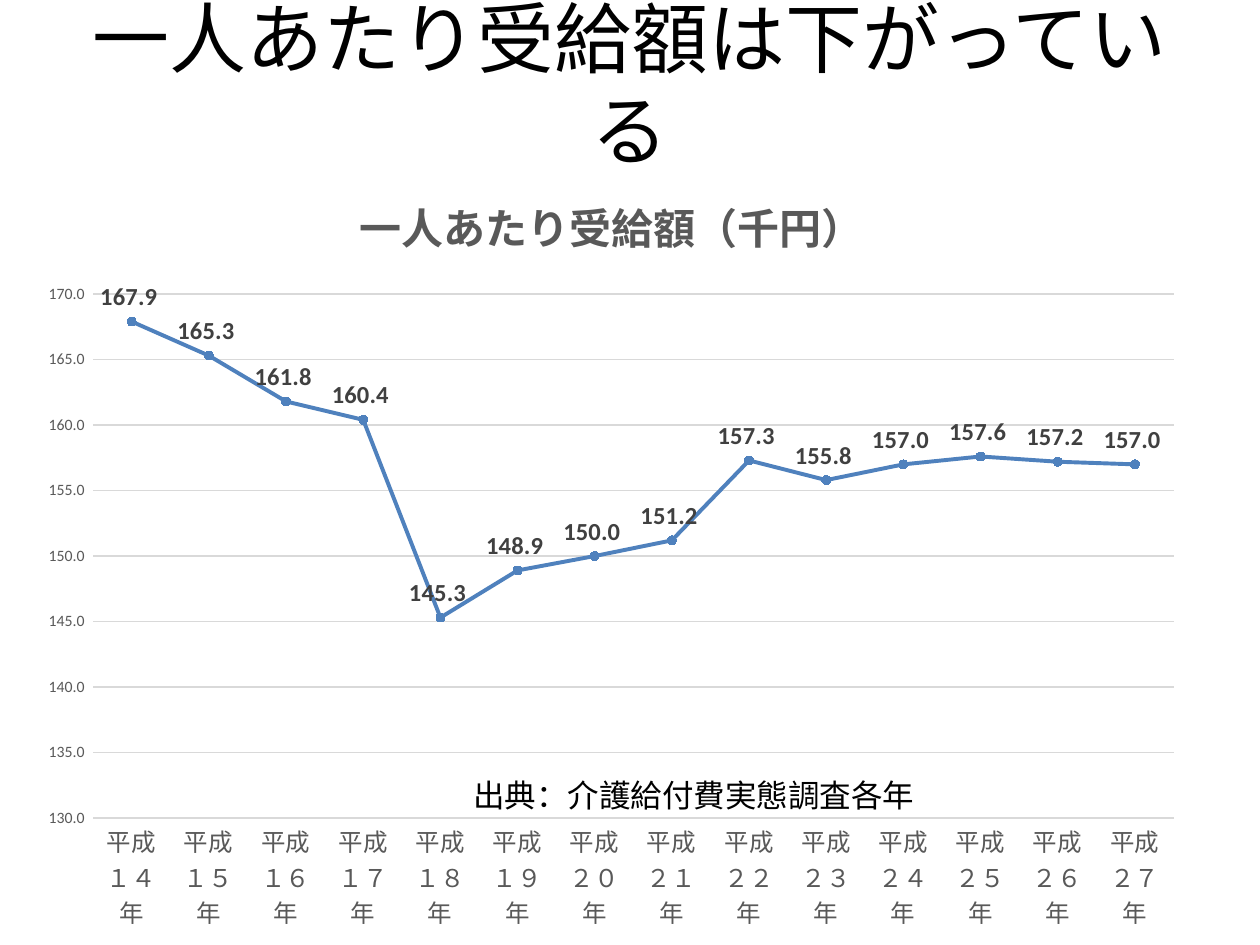
from dataclasses import dataclass

from pptx import Presentation
from pptx.chart.data import CategoryChartData
from pptx.dml.color import RGBColor
from pptx.enum.chart import XL_CHART_TYPE, XL_LABEL_POSITION, XL_MARKER_STYLE, XL_TICK_MARK
from pptx.enum.text import MSO_ANCHOR, PP_ALIGN
from pptx.util import Inches, Pt

FONT = "Calibri"
BLACK = RGBColor(0x00, 0x00, 0x00)
DARK_GRAY = RGBColor(0x40, 0x40, 0x40)
GRAY = RGBColor(0x59, 0x59, 0x59)
LIGHT_GRAY = RGBColor(0xD9, 0xD9, 0xD9)
BLUE = RGBColor(0x4F, 0x81, 0xBD)

NUMBER_FORMAT = "0.0_ "
FULL_WIDTH = str.maketrans("0123456789", "０１２３４５６７８９")
FIRST_YEAR = 14
AMOUNTS = (167.9, 165.3, 161.8, 160.4, 145.3, 148.9, 150.0,
           151.2, 157.3, 155.8, 157.0, 157.6, 157.2, 157.0)


@dataclass
class TextBlock:
    text: str
    left: float
    top: float
    width: float
    height: float
    size: float
    align: PP_ALIGN = PP_ALIGN.LEFT
    anchor: MSO_ANCHOR = MSO_ANCHOR.TOP


TITLE = TextBlock("一人あたり受給額は下がっている", 0.5, 0.03, 9, 1.25, 44,
                  PP_ALIGN.CENTER, MSO_ANCHOR.MIDDLE)
SOURCE_NOTE = TextBlock("出典：介護給付費実態調査各年", 3.66, 6.11, 5, 0.71, 18)


def format_font(font, *, size: float, color: RGBColor, bold: bool = False) -> None:
    font.name = FONT
    font.size = Pt(size)
    font.bold = bold
    font.color.rgb = color


def add_text(slide, block: TextBlock) -> None:
    shape = slide.shapes.add_textbox(Inches(block.left), Inches(block.top),
                                     Inches(block.width), Inches(block.height))
    frame = shape.text_frame
    frame.word_wrap = True
    frame.vertical_anchor = block.anchor
    paragraph = frame.paragraphs[0]
    paragraph.alignment = block.align
    run = paragraph.add_run()
    run.text = block.text
    format_font(run.font, size=block.size, color=BLACK)


def format_line(line, color: RGBColor, width: float) -> None:
    line.color.rgb = color
    line.width = Pt(width)


def format_axis(axis, size: float) -> None:
    axis.major_tick_mark = XL_TICK_MARK.NONE
    axis.minor_tick_mark = XL_TICK_MARK.NONE
    format_font(axis.tick_labels.font, size=size, color=GRAY)


def add_amount_chart(slide) -> None:
    data = CategoryChartData(number_format=NUMBER_FORMAT)
    data.categories = [f"平成{year}年".translate(FULL_WIDTH)
                       for year in range(FIRST_YEAR, FIRST_YEAR + len(AMOUNTS))]
    data.add_series("一人あたり受給額（千円）", AMOUNTS)
    chart = slide.shapes.add_chart(XL_CHART_TYPE.LINE_MARKERS, Inches(0.2), Inches(1.28),
                                   Inches(9.3), Inches(6.22), data).chart
    format_font(chart.font, size=10, color=BLACK)
    chart.has_legend = False

    # Chart title
    chart.has_title = True
    chart.chart_title.include_in_layout = False
    paragraph = chart.chart_title.text_frame.paragraphs[0]
    run = paragraph.add_run()
    run.text = "一人あたり受給額（千円）"
    format_font(run.font, size=24, color=GRAY, bold=True)

    # Axes
    format_axis(chart.category_axis, 14)
    format_line(chart.category_axis.format.line, LIGHT_GRAY, 0.75)
    value_axis = chart.value_axis
    format_axis(value_axis, 9)
    value_axis.minimum_scale, value_axis.maximum_scale, value_axis.major_unit = 130, 170, 5
    value_axis.format.line.fill.background()
    value_axis.tick_labels.number_format = NUMBER_FORMAT
    value_axis.tick_labels.number_format_is_linked = False
    format_line(value_axis.major_gridlines.format.line, LIGHT_GRAY, 0.75)

    # Line, markers and value labels
    plot = chart.plots[0]
    plot.vary_by_categories = False
    series = plot.series[0]
    series.smooth = False
    format_line(series.format.line, BLUE, 2.25)
    marker = series.marker
    marker.style = XL_MARKER_STYLE.CIRCLE
    marker.size = 5
    marker.format.fill.solid()
    marker.format.fill.fore_color.rgb = BLUE
    marker.format.line.color.rgb = BLUE
    labels = series.data_labels
    labels.show_value = True
    labels.position = XL_LABEL_POSITION.ABOVE
    labels.number_format = NUMBER_FORMAT
    labels.number_format_is_linked = False
    format_font(labels.font, size=14, color=DARK_GRAY, bold=True)


def main() -> None:
    presentation = Presentation()
    presentation.slide_width = Inches(10)
    presentation.slide_height = Inches(7.5)
    slide = presentation.slides.add_slide(presentation.slide_layouts[6])
    add_text(slide, TITLE)
    add_amount_chart(slide)
    add_text(slide, SOURCE_NOTE)
    presentation.save("out.pptx")


if __name__ == "__main__":
    main()
